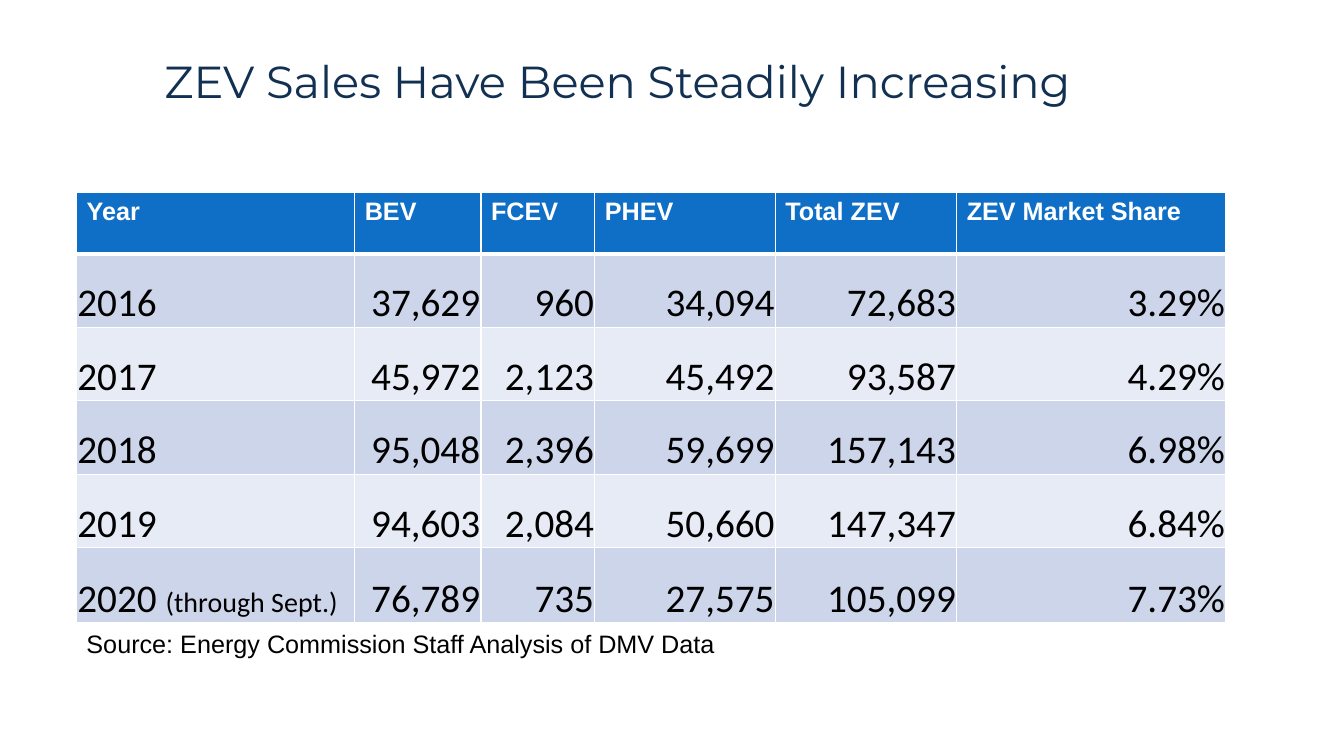
import dataclasses

import lxml.etree
import pptx
import pptx.dml.color
import pptx.enum.text
import pptx.oxml
import pptx.oxml.ns
import pptx.util

Cm = pptx.util.Cm
ANCHOR = pptx.enum.text.MSO_ANCHOR
ALIGN = pptx.enum.text.PP_ALIGN


@dataclasses.dataclass(frozen=True)
class Theme:
    navy: str = "113052"
    blue: str = "0F6FC6"
    white: str = "FFFFFF"
    black: str = "000000"
    bands: tuple = ("CCD5EA", "E7EBF5")
    title_size: int = 32
    figure_size: int = 28
    note_size: int = 20
    label_size: int = 18
    rule: int = 1
    header_rule: int = 3


THEME = Theme()
TITLE_FORMAT = {"name": "Montserrat", "size": THEME.title_size, "color": THEME.navy}
HEADER_FORMAT = {"name": "Arial", "size": THEME.label_size, "color": THEME.white, "bold": True}
FIGURE_FORMAT = {"name": "Calibri", "size": THEME.figure_size, "color": THEME.black, "bold": False}
NOTE_FORMAT = {**FIGURE_FORMAT, "size": THEME.note_size}
SOURCE_FORMAT = {"name": "Arial", "size": THEME.label_size, "color": THEME.black}

HEADERS = ["Year", "BEV", "FCEV", "PHEV", "Total ZEV", "ZEV Market Share"]
SALES = [
    ["2016", "37,629", "960", "34,094", "72,683", "3.29%"],
    ["2017", "45,972", "2,123", "45,492", "93,587", "4.29%"],
    ["2018", "95,048", "2,396", "59,699", "157,143", "6.98%"],
    ["2019", "94,603", "2,084", "50,660", "147,347", "6.84%"],
    ["2020 ", "76,789", "735", "27,575", "105,099", "7.73%"],
]
PARTIAL_YEAR_NOTE = "(through Sept.)"
COLUMN_WIDTHS = [7.01, 3.18, 2.87, 4.55, 4.57, 6.78]
ROW_HEIGHTS = [1.54] + [1.85] * 4 + [1.9]


def set_attributes(target, values):
    for name, value in values.items():
        setattr(target, name, value)


def add_run(paragraph, text, format_values):
    run = paragraph.add_run()
    run.text = text
    values = dict(format_values)
    run.font.color.rgb = pptx.dml.color.RGBColor.from_string(values.pop("color"))
    values["size"] = pptx.util.Pt(values["size"])
    set_attributes(run.font, values)


def set_borders(cell, widths):
    """Draw white rules; widths gives points for left, right, top, bottom."""
    properties = cell._tc.get_or_add_tcPr()
    for position, (side, width) in enumerate(zip("LRTB", widths)):
        line = pptx.oxml.parse_xml(
            f'<a:ln{side} {pptx.oxml.ns.nsdecls("a")} w="{pptx.util.Pt(width)}">'
            f'<a:solidFill><a:srgbClr val="{THEME.white}"/></a:solidFill></a:ln{side}>'
        )
        properties.insert(position, line)


def format_cell(cell, row, column):
    is_header = row == 0
    color = THEME.blue if is_header else THEME.bands[(row - 1) % 2]
    cell.fill.solid()
    cell.fill.fore_color.rgb = pptx.dml.color.RGBColor.from_string(color)
    top = THEME.header_rule if row == 1 else THEME.rule
    bottom = THEME.header_rule if is_header else THEME.rule
    set_borders(cell, (THEME.rule, THEME.rule, top, bottom))
    if not is_header:
        set_attributes(cell, {
            "vertical_anchor": ANCHOR.BOTTOM,
            "margin_left": Cm(0.02), "margin_right": Cm(0.02),
            "margin_top": Cm(0.02), "margin_bottom": 0,
        })
        if column > 0:
            cell.text_frame.paragraphs[0].alignment = ALIGN.RIGHT


def add_title(slide, left, top, width, height):
    title = slide.shapes.title
    set_attributes(title, {"left": left, "top": top, "width": width, "height": height})
    set_attributes(title.text_frame, {
        "word_wrap": True,
        "auto_size": pptx.enum.text.MSO_AUTO_SIZE.NONE,
        "vertical_anchor": ANCHOR.MIDDLE,
    })
    paragraph = title.text_frame.paragraphs[0]
    set_attributes(paragraph, {"alignment": ALIGN.LEFT, "line_spacing": 0.9})
    add_run(paragraph, "ZEV Sales Have Been Steadily Increasing", TITLE_FORMAT)


def add_sales_table(slide, left, top, width, height):
    rows = [HEADERS] + SALES
    table = slide.shapes.add_table(len(rows), len(HEADERS), left, top, width, height).table
    for column, column_width in zip(table.columns, COLUMN_WIDTHS):
        column.width = Cm(column_width)
    for row, row_height in zip(table.rows, ROW_HEIGHTS):
        row.height = Cm(row_height)
    for row_index, values in enumerate(rows):
        text_format = FIGURE_FORMAT if row_index else HEADER_FORMAT
        for column_index, value in enumerate(values):
            cell = table.cell(row_index, column_index)
            format_cell(cell, row_index, column_index)
            add_run(cell.text_frame.paragraphs[0], value, text_format)
    # The last year is incomplete
    last_year = table.cell(len(rows) - 1, 0)
    add_run(last_year.text_frame.paragraphs[0], PARTIAL_YEAR_NOTE, NOTE_FORMAT)


def add_source(slide, left, top, width, height):
    text_frame = slide.shapes.add_textbox(left, top, width, height).text_frame
    set_attributes(text_frame, {
        "word_wrap": True,
        "auto_size": pptx.enum.text.MSO_AUTO_SIZE.SHAPE_TO_FIT_TEXT,
    })
    add_run(text_frame.paragraphs[0],
            "Source: Energy Commission Staff Analysis of DMV Data", SOURCE_FORMAT)


def main():
    presentation = pptx.Presentation()
    set_attributes(presentation, {"slide_width": Cm(33.87), "slide_height": Cm(19.05)})
    slide = presentation.slides.add_slide(presentation.slide_layouts.get_by_name("Title Only"))

    # Title
    add_title(slide, Cm(3.89), Cm(0.66), Cm(27.66), Cm(2.9))

    # Sales by year, with the source directly below
    left, top = Cm(1.93), Cm(4.86)
    table_height = Cm(sum(ROW_HEIGHTS))
    add_sales_table(slide, left, top, Cm(sum(COLUMN_WIDTHS)), table_height)
    add_source(slide, left, top + table_height, Cm(16.59), Cm(1.02))

    presentation.save("out.pptx")


if __name__ == "__main__":
    main()
